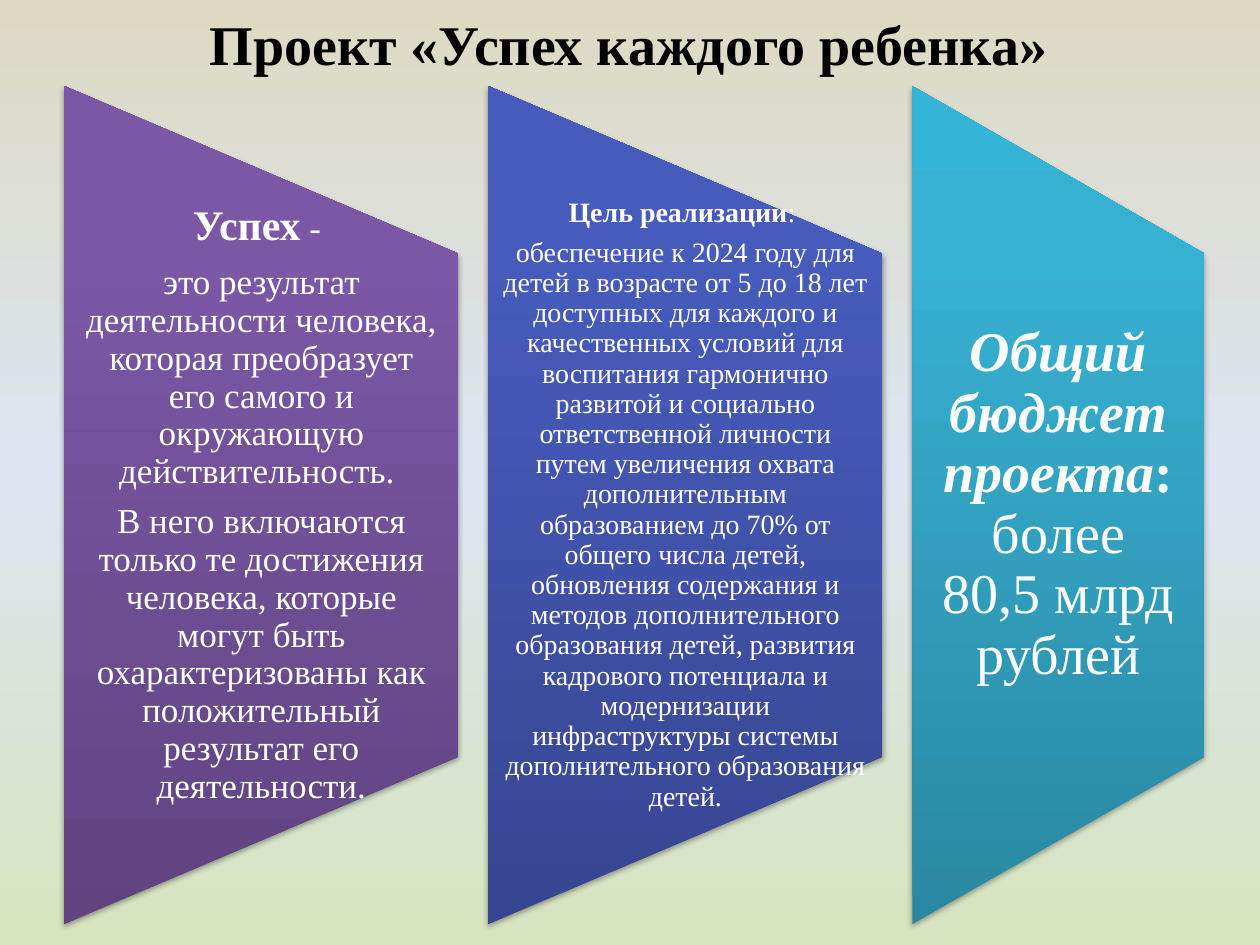
from lxml.etree import SubElement
from pptx import Presentation
from pptx.dml.color import RGBColor
from pptx.enum.shapes import MSO_SHAPE
from pptx.enum.text import MSO_ANCHOR, MSO_AUTO_SIZE, PP_ALIGN
from pptx.oxml.ns import qn
from pptx.util import Emu, Inches, Pt

WIDTH, HEIGHT = Inches(10), Inches(7.5)
FONT = "Times New Roman"
COLORS = {
    "title": "000000",
    "text": "FFFFFF",
    "shadow": "000000",
    "page": [(1, "DDD9C3"), (50, "DCE6F2"), (100, "D7E4BD")],
    "purple": [(0, "5F4480"), (80, "7B58A6"), (100, "7C57A8")],
    "blue": [(0, "374691"), (80, "475BBC"), (100, "455ABF")],
    "teal": [(0, "2A88A2"), (80, "37B1D2"), (100, "34B4D6")],
}
COLUMN_LEFT, COLUMN_TOP = 0.051 * WIDTH, 0.091 * HEIGHT
COLUMN_HEIGHT = 0.887 * HEIGHT
COLUMN_GAP = 0.0235 * WIDTH
COLUMNS = [
    {
        "width": 0.313, "color": "purple", "inset": 0.17, "size": 20,
        "paragraphs": [
            [("Успех", {"bold": True, "size": 24}), (" - ", {})],
            [("это результат деятельности человека, которая преобразует его "
              "самого и окружающую действительность. ", {})],
            [("В него включаются только те достижения человека, которые могут "
              "быть охарактеризованы как положительный результат его "
              "деятельности.", {})],
        ],
    },
    {
        "width": 0.313, "color": "blue", "inset": 0.11, "size": 16,
        "paragraphs": [
            [("Цель реализации", {"bold": True}), (": ", {})],
            [("обеспечение к 2024 году для детей в возрасте от 5 до 18 лет "
              "доступных для каждого и качественных условий для воспитания "
              "гармонично развитой и социально ответственной личности путем "
              "увеличения охвата дополнительным образованием до 70% от общего "
              "числа детей, обновления содержания и методов дополнительного "
              "образования детей, развития кадрового потенциала и модернизации "
              "инфраструктуры системы дополнительного образования детей.", {})],
        ],
    },
    {
        "width": 0.232, "color": "teal", "inset": 0.22, "size": 32,
        "paragraphs": [
            [("Общий бюджет проекта", {"bold": True, "italic": True}),
             (": ", {"bold": True}), ("более 80,5 млрд рублей", {})],
        ],
    },
]


def add_text(para, text, size, color="text", bold=False, italic=False):
    span = para.add_run()
    span.text = text
    font = span.font
    font.name, font.size, font.bold, font.italic = FONT, Pt(size), bold, italic
    font.color.rgb = RGBColor.from_string(COLORS[color])


def set_gradient(fill, element, stops, angle):
    fill.gradient()
    gradient = next(element.iter(qn("a:gradFill")))
    gradient.set("rotWithShape", "0")
    for child in list(gradient):
        gradient.remove(child)
    stop_list = SubElement(gradient, qn("a:gsLst"))
    for position, color in stops:
        stop = SubElement(stop_list, qn("a:gs"), pos=str(position * 1000))
        SubElement(stop, qn("a:srgbClr"), val=color)
    SubElement(gradient, qn("a:lin"), ang=str(angle * 60000), scaled="0")


def add_shadow(shape):
    shape.shadow.inherit = False
    effects = next(shape.element.iter(qn("a:effectLst")))
    shadow = SubElement(effects, qn("a:outerShdw"), blurRad=str(Pt(3.1)),
                        dist=str(Pt(1.8)), dir="5400000", rotWithShape="0")
    color = SubElement(shadow, qn("a:srgbClr"), val=COLORS["shadow"])
    SubElement(color, qn("a:alpha"), val="35000")


def place_title(page, left, top, width, height):
    title = page.shapes.title
    title.left, title.top, title.width, title.height = map(
        Emu, map(int, (left, top, width, height)))
    frame = title.text_frame
    frame.auto_size = MSO_AUTO_SIZE.NONE
    frame.vertical_anchor = MSO_ANCHOR.MIDDLE
    para = frame.paragraphs[0]
    para.alignment = PP_ALIGN.CENTER
    add_text(para, "Проект «Успех каждого ребенка»", 32, color="title", bold=True)


def add_panel(page, left, top, width, height, color):
    panel = page.shapes.add_shape(
        MSO_SHAPE.FLOWCHART_MANUAL_OPERATION,
        int(left + (width - height) / 2), int(top + (height - width) / 2),
        int(height), int(width))
    panel.rotation = 270
    set_gradient(panel.fill, panel.element, COLORS[color], 270)
    panel.line.fill.background()
    add_shadow(panel)


def add_column(page, left, top, width, height, column):
    add_panel(page, left, top, width, height, column["color"])
    box = page.shapes.add_textbox(int(left), int(top + height / 5),
                                  int(width), int(height * 3 / 5))
    frame = box.text_frame
    frame.word_wrap = True
    frame.vertical_anchor = MSO_ANCHOR.MIDDLE
    frame.margin_left = frame.margin_right = Inches(column["inset"])
    frame.margin_top = frame.margin_bottom = 0
    for index, spans in enumerate(column["paragraphs"]):
        para = frame.add_paragraph() if index else frame.paragraphs[0]
        para.alignment = PP_ALIGN.CENTER
        para.line_spacing = 0.9
        para.space_before = Pt(0)
        properties = next(para._p.iter(qn("a:pPr")))
        after = SubElement(properties, qn("a:spcAft"))
        SubElement(after, qn("a:spcPct"), val="35000")
        for text, style in spans:
            add_text(para, text, **{"size": column["size"], **style})


def main():
    deck = Presentation()
    deck.slide_width, deck.slide_height = WIDTH, HEIGHT
    page = deck.slides.add_slide(deck.slide_layouts[5])
    set_gradient(page.background.fill, page.element, COLORS["page"], 90)
    place_title(page, 0.049 * WIDTH, 0, 0.9 * WIDTH, 0.092 * HEIGHT)
    left = COLUMN_LEFT
    for column in COLUMNS:
        width = column["width"] * WIDTH
        add_column(page, left, COLUMN_TOP, width, COLUMN_HEIGHT, column)
        left += width + COLUMN_GAP
    deck.save("out.pptx")


if __name__ == "__main__":
    main()
